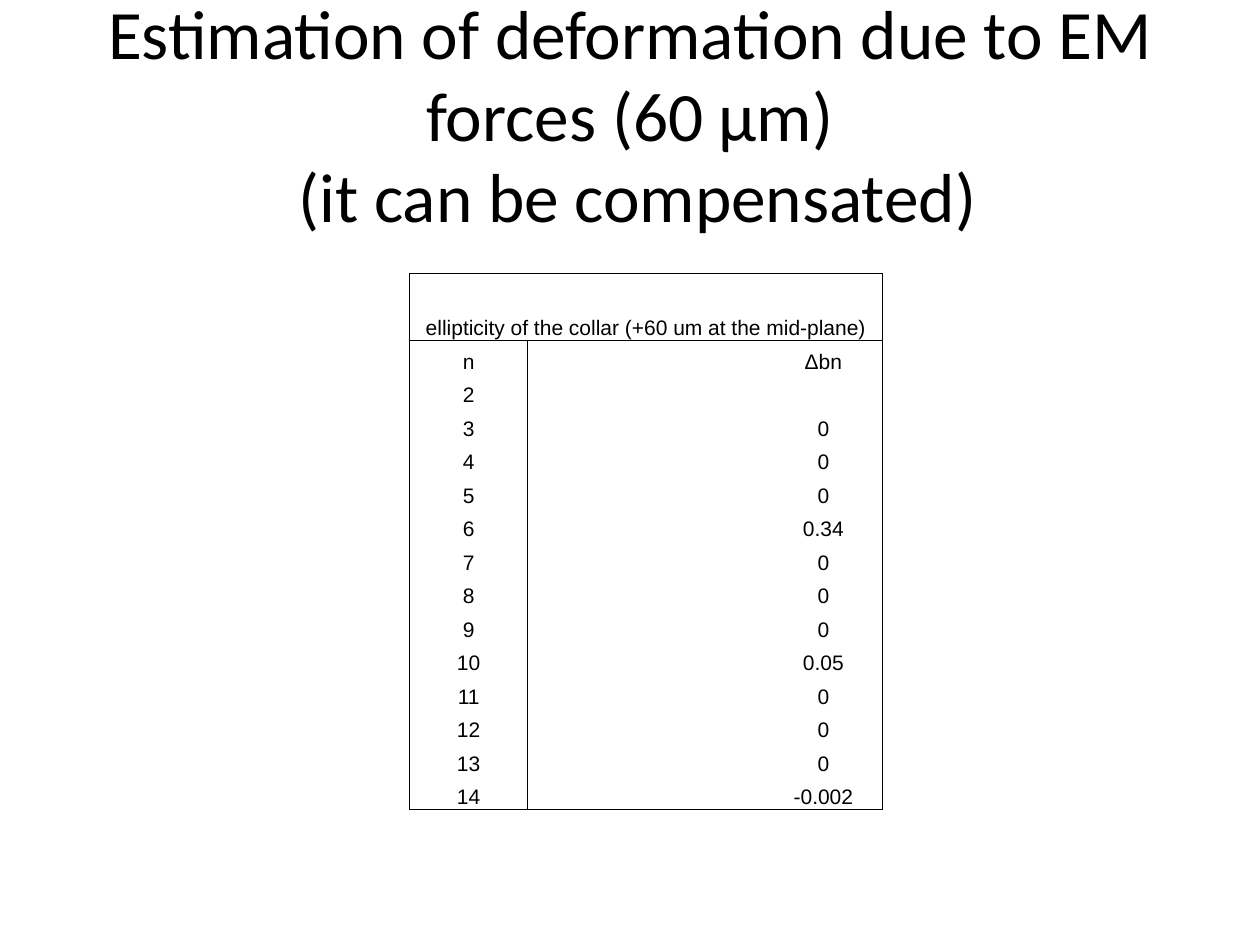
import dataclasses
import typing

import lxml.etree
import pptx
import pptx.dml.color
import pptx.enum.text
import pptx.oxml.ns
import pptx.util

Pt = pptx.util.Pt
qn = pptx.oxml.ns.qn
COLORS = {"ink": "000000"}
CENTER = pptx.enum.text.PP_ALIGN.CENTER
NO_INSETS = dict.fromkeys(("margin_left", "margin_top", "margin_right", "margin_bottom"), 0)
HEADING = "ellipticity of the collar (+60 um at the mid-plane)"
SHIFTS = {
    "n": "Δbn", "2": "", "3": "0", "4": "0", "5": "0", "6": "0.34", "7": "0", "8": "0",
    "9": "0", "10": "0.05", "11": "0", "12": "0", "13": "0", "14": "-0.002",
}
COLUMN_WIDTH = 67.6
ROW_HEIGHT = 19.15


@dataclasses.dataclass(frozen=True)
class TextStyle:
    font: str
    size: float
    color: str = "ink"


TITLE_STYLE = TextStyle("Calibri", 39.6)
CELL_STYLE = TextStyle("Arial", 12)


def apply_format(target: typing.Any, values: dict[str, typing.Any]) -> None:
    for name, value in values.items():
        setattr(target, name, value)


def style_text(para: typing.Any, style: TextStyle) -> None:
    para.alignment = CENTER
    for span in para.runs:
        apply_format(span.font, {"name": style.font, "size": Pt(style.size)})
        span.font.color.rgb = pptx.dml.color.RGBColor.from_string(COLORS[style.color])
    if not para.runs:
        ending = lxml.etree.SubElement(para._p, qn("a:endParaRPr"))
        ending.set("sz", str(int(style.size * 100)))


def draw_title(page: typing.Any, text: str) -> None:
    box = page.shapes.add_textbox(Pt(36), Pt(21.6), Pt(648), Pt(90))
    apply_format(box.text_frame, {
        "word_wrap": True,
        "vertical_anchor": pptx.enum.text.MSO_ANCHOR.MIDDLE,
    })
    para = box.text_frame.paragraphs[0]
    para.text = text
    para.line_spacing = 0.98
    style_text(para, TITLE_STYLE)


def draw_borders(cell: typing.Any, sides: str) -> None:
    properties = cell._tc.get_or_add_tcPr()
    for side in "LRTB":
        line = lxml.etree.SubElement(properties, qn(f"a:ln{side}"), w=str(Pt(0.5)))
        if side in sides:
            fill = lxml.etree.SubElement(line, qn("a:solidFill"))
            lxml.etree.SubElement(fill, qn("a:srgbClr"), val=COLORS["ink"])
        else:
            lxml.etree.SubElement(line, qn("a:noFill"))


def border_sides(row: int, column: int, last_row: int) -> str:
    if row == 0:
        return "LRTB"
    sides = {0: "LR", 1: "L", 2: "", 3: "R"}[column]
    return sides + "T" * (row == 1) + "B" * (row == last_row)


def draw_table(page: typing.Any, rows: list[list[str]]) -> None:
    columns = len(rows[0])
    height = ROW_HEIGHT * (len(rows) + 1)
    frame = page.shapes.add_table(
        len(rows), columns, Pt(234), Pt(156.2), Pt(COLUMN_WIDTH * columns), Pt(height)
    )
    table = frame.table
    apply_format(table, {"first_row": False, "horz_banding": False})
    for column in table.columns:
        column.width = Pt(COLUMN_WIDTH)
    for index, texts in enumerate(rows):
        table.rows[index].height = Pt(ROW_HEIGHT * (2 if index == 0 else 1))
        for column, text in enumerate(texts):
            cell = table.cell(index, column)
            cell.text = text
            apply_format(cell, NO_INSETS)
            cell.vertical_anchor = pptx.enum.text.MSO_ANCHOR.BOTTOM
            style_text(cell.text_frame.paragraphs[0], CELL_STYLE)
            draw_borders(cell, border_sides(index, column, len(rows) - 1))
            cell.fill.background()
    table.cell(0, 0).merge(table.cell(0, columns - 1))


def main() -> None:
    """Build the slide on collar deformation and its table of multipole shifts."""
    deck = pptx.Presentation()
    apply_format(deck, {"slide_width": Pt(720), "slide_height": Pt(540)})
    page = deck.slides.add_slide(deck.slide_layouts[6])
    draw_title(
        page,
        "Estimation of deformation due to EM forces (60 µm)\v (it can be compensated)",
    )
    rows = [[HEADING, "", "", ""]]
    rows += [[order, "", "", shift] for order, shift in SHIFTS.items()]
    draw_table(page, rows)
    deck.save("out.pptx")


if __name__ == "__main__":
    main()
